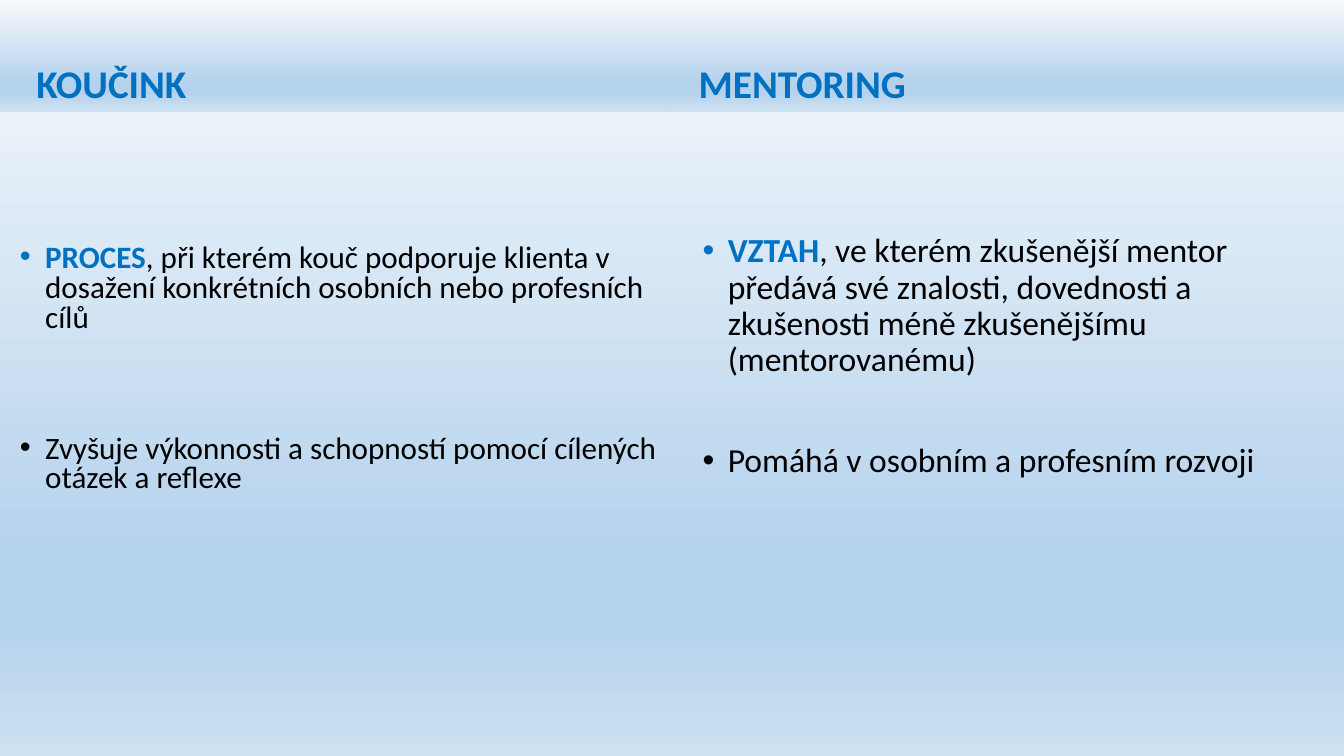
from lxml import etree
from pptx import Presentation, util as u
from pptx.dml.color import RGBColor
from pptx.enum import shapes, text
from pptx.oxml import ns


def rgb(value):
    return RGBColor.from_string(value)


def add_run(p, content, size=24, color="000000", bold=False, font="Calibri"):
    r = p.add_run()
    r.text = content
    r.font.name = font
    r.font.size = u.Pt(size)
    r.font.bold = bold
    r.font.color.rgb = rgb(color)


class Deck:
    """Holds the style and the current slide."""

    BLUE = "0070C0"
    STOPS = [(0, "F7FAFD"), (74, "B5D2EC"), (83, "B5D2EC"), (100, "CEE1F2")]

    def __init__(self, width, height):
        self.prs = Presentation()
        self.prs.slide_width = u.Inches(width)
        self.prs.slide_height = u.Inches(height)
        self.s = self.prs.slides.add_slide(self.prs.slide_layouts[6])

    def gradient(self, fill, element):
        fill.gradient()
        fill.gradient_angle = 270
        stops = next(element.iter(ns.qn("a:gsLst")))
        for stop in list(stops):
            stops.remove(stop)
        for position, color in self.STOPS:
            gs = etree.SubElement(stops, ns.qn("a:gs"), pos=str(position * 1000))
            etree.SubElement(gs, ns.qn("a:srgbClr"), val=color)

    def background(self):
        self.gradient(self.s.background.fill, self.s.element)

    def header(self, content, left, width, indent):
        sp = self.s.shapes.add_shape(
            shapes.MSO_SHAPE.RECTANGLE,
            u.Inches(left), u.Inches(0), u.Inches(width), u.Inches(1.11))
        sp.shadow.inherit = False
        sp.line.fill.background()
        self.gradient(sp.fill, sp.element)
        tf = sp.text_frame
        tf.vertical_anchor = text.MSO_ANCHOR.BOTTOM
        tf.margin_left = u.Inches(indent)
        p = tf.paragraphs[0]
        p.alignment = text.PP_ALIGN.LEFT
        p.line_spacing = 0.9
        add_run(p, content, size=28, color=self.BLUE, bold=True)

    def bullets(self, items, box, inset, size, spacing, gap):
        sp = self.s.shapes.add_textbox(*map(u.Inches, box))
        tf = sp.text_frame
        tf.word_wrap = True
        tf.margin_top = u.Inches(inset)
        for i, (keyword, content) in enumerate(items):
            p = tf.add_paragraph() if i else tf.paragraphs[0]
            p.line_spacing = spacing
            p.space_before = u.Pt(gap if i else 0)
            pPr = p._p.get_or_add_pPr()
            pPr.set("marL", str(u.Inches(0.25)))
            pPr.set("indent", str(u.Inches(-0.25)))
            etree.SubElement(pPr, ns.qn("a:buFont"), typeface="Arial")
            etree.SubElement(pPr, ns.qn("a:buChar"), char="•")
            if keyword:
                add_run(p, keyword, size=size, color=self.BLUE, bold=True)
            add_run(p, content, size=size)


def main():
    deck = Deck(13.33, 7.5)
    deck.background()
    deck.header("KOUČINK", left=0, width=6.65, indent=0.36)
    deck.bullets(
        [("PROCES", ", při kterém kouč podporuje klienta v dosažení "
                    "konkrétních osobních nebo profesních cílů"),
         ("", "Zvyšuje výkonnosti a schopností pomocí cílených otázek a reflexe")],
        box=(0.1, 1.85, 6.77, 4.9), inset=0.58, size=22.2, spacing=0.8, gap=72)
    deck.header("MENTORING", left=6.65, width=6.68, indent=0.28)
    deck.bullets(
        [("VZTAH", ", ve kterém zkušenější mentor předává své znalosti, "
                   "dovednosti a zkušenosti méně zkušenějšímu (mentorovanému)"),
         ("", "Pomáhá v osobním a profesním rozvoji")],
        box=(6.87, 1.73, 6.24, 5.28), inset=0.59, size=24, spacing=0.9, gap=46)
    deck.prs.save("out.pptx")


if __name__ == "__main__":
    main()
